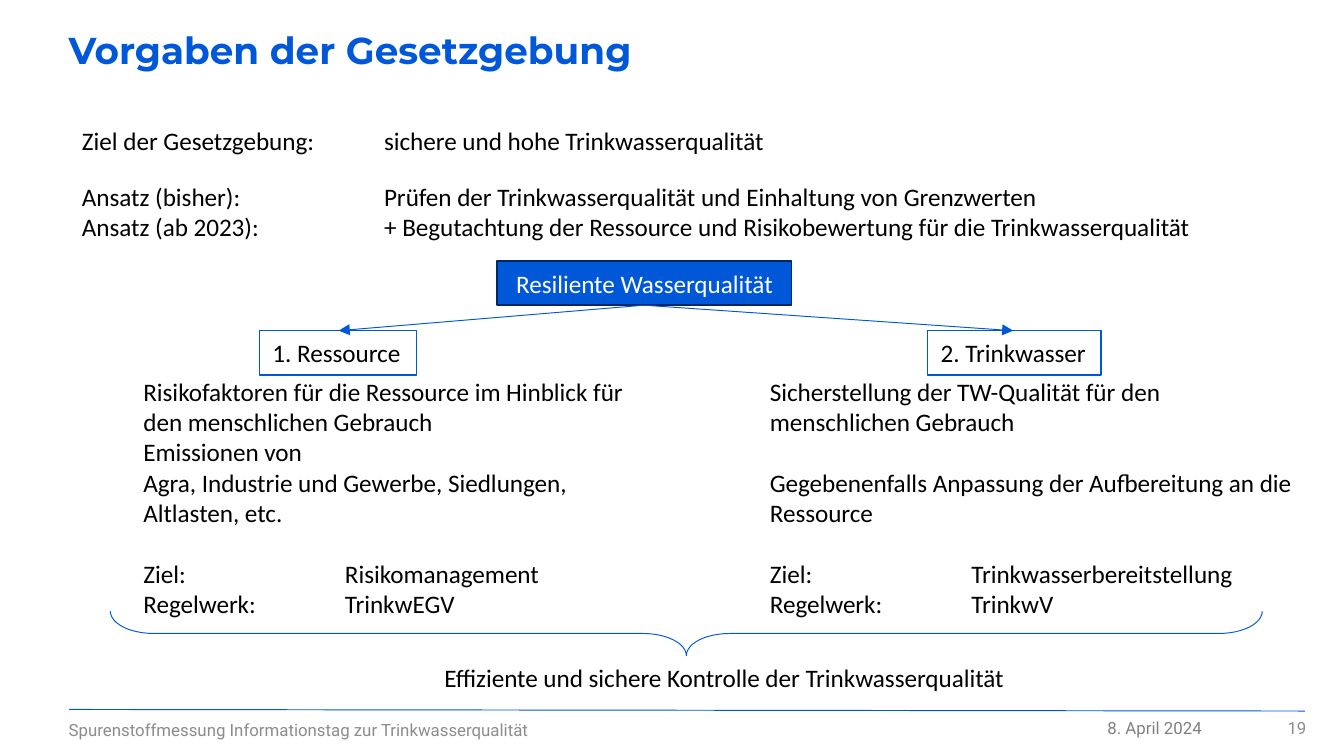
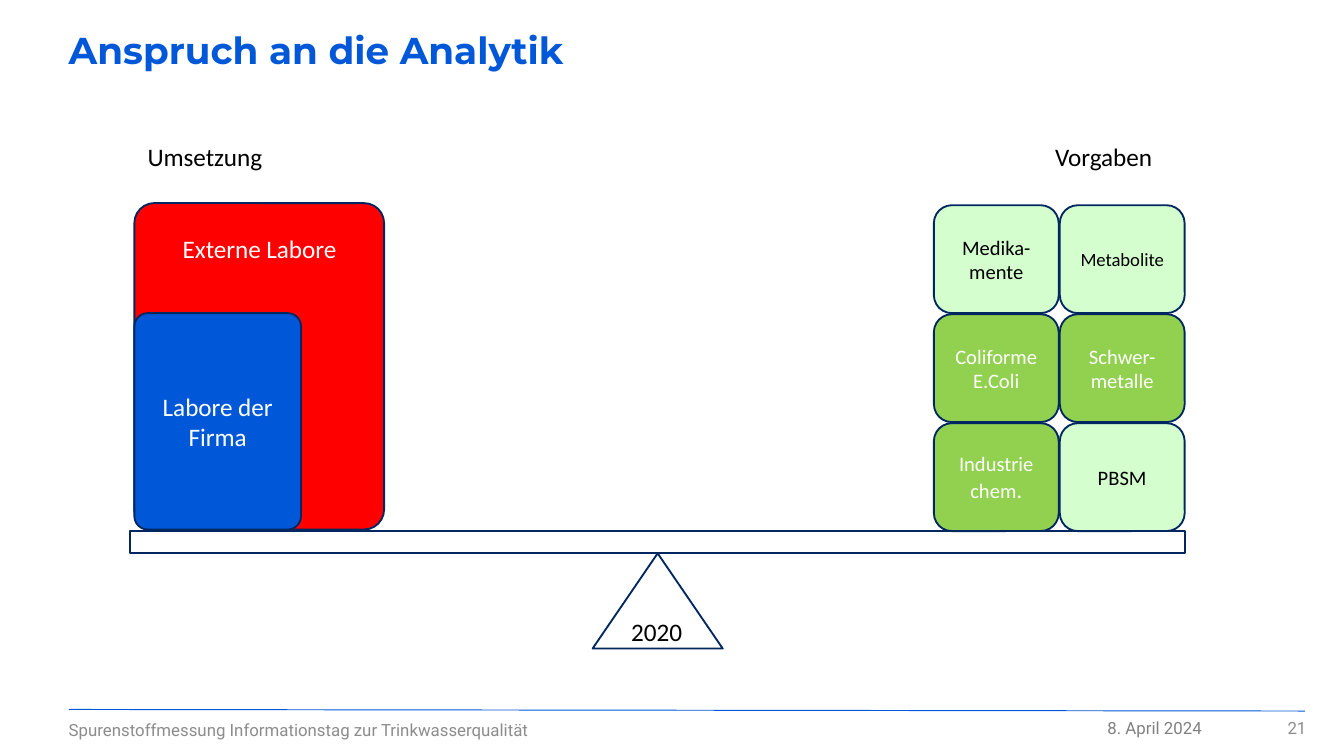
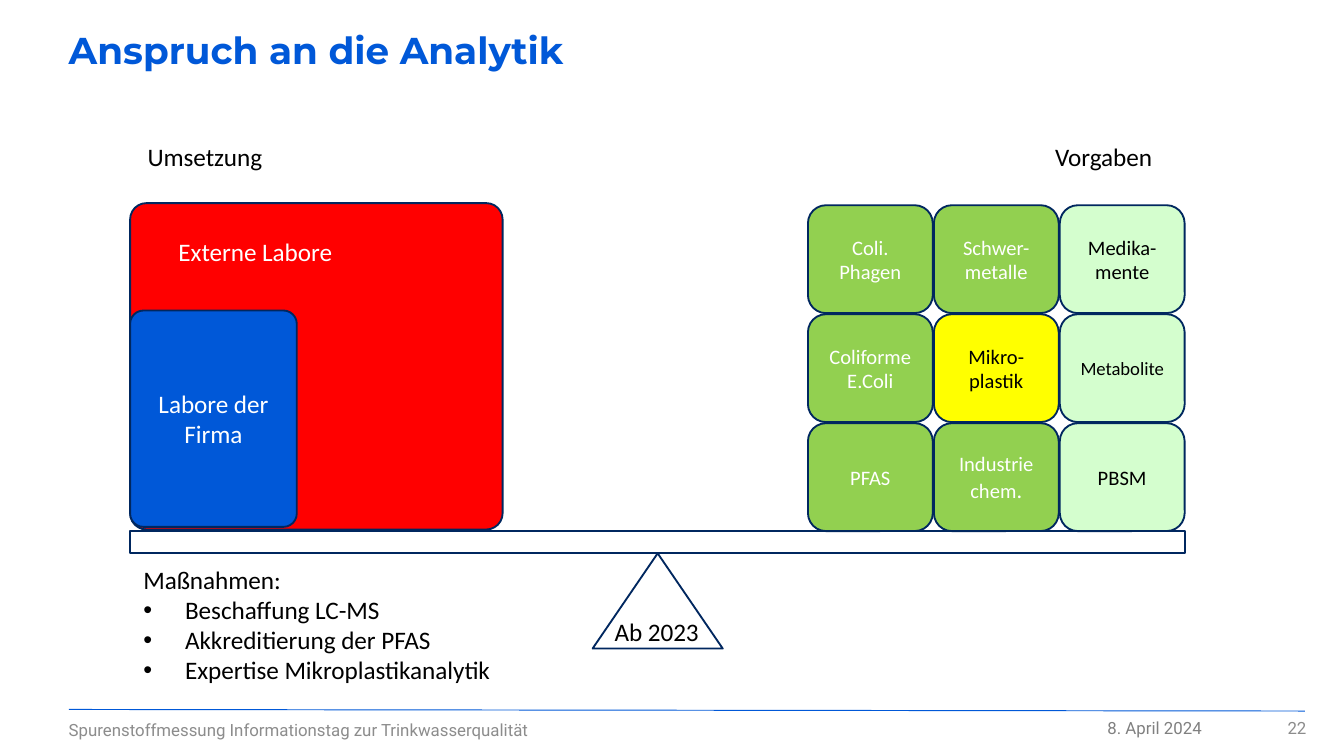
"""Build three slides on drinking water rules and laboratory analysis."""
from lxml import etree
from pptx import Presentation
from pptx import util as u
from pptx.dml import color
from pptx.enum import shapes, text
from pptx.oxml import ns

BLUE, NAVY, RED = "0058D8", "00275F", "FF0000"
GREEN, MINT, YELLOW = "92D050", "D4FECE", "FFFF00"
BLACK, WHITE, GREY, DATE_GREY = "000000", "FFFFFF", "8C8C8C", "808080"
BODY, HEAD, FOOT = "Calibri", "Montserrat", "Roboto"
BODY_SIZE, LINE_GAP = 13.5, 16.4
SHAPE, ALIGN, ANCHOR = shapes.MSO_SHAPE, text.PP_ALIGN, text.MSO_ANCHOR

INDUSTRY = [[("Industrie chem", 11), (".", 12)]]
COLI = ["Coliforme", "E.Coli"]
GRID_2020 = [
    [(["Medika-mente"], MINT, 11), (["Metabolite"], MINT, 10)],
    [(COLI, GREEN, 11), (["Schwer-metalle"], GREEN, 11)],
    [(INDUSTRY, GREEN, 11), (["PBSM"], MINT, 11)],
]
GRID_2023 = [
    [(["Coli. Phagen"], GREEN, 11), (["Schwer-metalle"], GREEN, 11), (["Medika-mente"], MINT, 11)],
    [(COLI, GREEN, 11), (["Mikro-plastik"], YELLOW, 11), (["Metabolite"], MINT, 10)],
    [(["PFAS"], GREEN, 11), (INDUSTRY, GREEN, 11), (["PBSM"], MINT, 11)],
]


def rgb(value):
    """Turn a hex string into a colour."""
    return color.RGBColor.from_string(value)


def cm(*values):
    """Turn numbers into lengths in centimetres."""
    return [u.Cm(v) for v in values]


def add_xml(parent, tag, **attrs):
    """Append a drawing element with the given attributes."""
    return etree.SubElement(parent, ns.qn(tag), attrs)


def write(sp, paras, size=BODY_SIZE, ink=BLACK, font=BODY, align=ALIGN.LEFT,
          anchor=ANCHOR.TOP, wrap=True, tab=None, gaps=None, bold=False):
    """Fill a shape with paragraphs, each a string or a list of sized runs."""
    tf = sp.text_frame
    tf.word_wrap, tf.vertical_anchor = wrap, anchor
    for i, para in enumerate(paras):
        p = tf.paragraphs[0] if i == 0 else tf.add_paragraph()
        p.alignment = align
        if tab:
            tabs = add_xml(p._p.get_or_add_pPr(), "a:tabLst")
            add_xml(tabs, "a:tab", pos=str(u.Cm(tab)), algn="l")
        if gaps and i in gaps:
            p.space_before = u.Pt(gaps[i])
        for words, points in [(para, size)] if isinstance(para, str) else para:
            r = p.add_run()
            r.text = words
            r.font.name, r.font.size, r.font.bold = font, u.Pt(points), bold
            r.font.color.rgb = rgb(ink)
    return tf


def add_text(s, box, paras, margins=True, **style):
    """Add a text box, with or without inner margins."""
    sp = s.shapes.add_textbox(*cm(*box))
    tf = write(sp, paras, **style)
    if not margins:
        tf.margin_left = tf.margin_right = tf.margin_top = tf.margin_bottom = 0
    return tf


def add_box(s, kind, box, fill=None, line=NAVY, width=1, adjust=()):
    """Add a preset shape with an outline and an optional fill."""
    sp = s.shapes.add_shape(kind, *cm(*box))
    sp.shadow.inherit = False
    if fill:
        sp.fill.solid()
        sp.fill.fore_color.rgb = rgb(fill)
    else:
        sp.fill.background()
    sp.line.color.rgb, sp.line.width = rgb(line), u.Pt(width)
    for i, value in enumerate(adjust):
        sp.adjustments[i] = value
    return sp


def add_line(s, start, end, arrow=False):
    """Add a thin blue line, with an arrowhead at its end if wanted."""
    sp = s.shapes.add_connector(shapes.MSO_CONNECTOR.STRAIGHT, *cm(*start, *end))
    sp.line.color.rgb, sp.line.width = rgb(BLUE), u.Pt(0.5)
    if arrow:
        add_xml(sp.line._get_or_add_ln(), "a:tailEnd", type="triangle")
    add_xml(sp._element.spPr, "a:effectLst")


def add_bullets(paragraphs):
    """Give paragraphs a hanging bullet."""
    for p in paragraphs:
        pPr = p._p.get_or_add_pPr()
        pPr.set("marL", str(u.Cm(0.79)))
        pPr.set("indent", str(u.Cm(-0.79)))
        add_xml(pPr, "a:buFont", typeface="Arial")
        add_xml(pPr, "a:buChar", char="•")


def add_page(prs, title, number):
    """Add a slide with its title, footer line and footer texts."""
    s = prs.slides.add_slide(prs.slide_layouts[6])
    add_line(s, (1.3, 13.41), (24.66, 13.44))
    tf = add_text(s, (1.3, 0.61, 16.69, 2.18), [title], margins=False,
                  size=20, ink=BLUE, font=HEAD, bold=True)
    tf.paragraphs[0].line_spacing = 0.9
    for box, words, ink, align in (
            ((17, 13.41, 5.71, 0.71), "8. April 2024", DATE_GREY, ALIGN.RIGHT),
            ((1.3, 13.44, 8.94, 0.71), "Spurenstoffmessung Informationstag zur Trinkwasserqualität",
             GREY, ALIGN.LEFT),
            ((23.06, 13.41, 1.63, 0.71), str(number), GREY, ALIGN.RIGHT)):
        add_text(s, box, [words], margins=False, size=9, ink=ink, font=FOOT,
                 align=align, anchor=ANCHOR.MIDDLE)
    return s


def add_branch(s, box, label, tip):
    """Add an outlined branch label and the arrow that leads to it."""
    write(add_box(s, SHAPE.RECTANGLE, box, line=BLUE, width=0.75), [label], wrap=False)
    add_line(s, (12.17, 5.77), (tip, 6.25), arrow=True)


def add_tiles(s, rows):
    """Stack rounded tiles on the right end of the beam."""
    for i, row in enumerate(rows):
        for j, (paras, fill, size) in enumerate(row):
            left = 20.03 - 2.38 * (len(row) - 1 - j)
            sp = add_box(s, SHAPE.ROUNDED_RECTANGLE, (left, 3.88 + 2.06 * i, 2.36, 2.04), fill)
            write(sp, paras, size=size, ink=WHITE if fill == GREEN else BLACK,
                  align=ALIGN.CENTER, anchor=ANCHOR.MIDDLE)


def add_labs(s, left, width, corner, label_top, own_top):
    """Add the external laboratories with the own laboratories in front."""
    add_box(s, SHAPE.ROUNDED_RECTANGLE, (left, 3.84, width, 6.17), RED, adjust=[corner])
    own = add_box(s, SHAPE.ROUNDED_RECTANGLE, (left, own_top, 3.15, 4.09), BLUE, adjust=[0.08])
    write(own, ["Labore der", "Firma"], ink=WHITE, align=ALIGN.CENTER, anchor=ANCHOR.MIDDLE)
    add_text(s, (left + 0.36, label_top, 4.01, 0.86), ["Externe Labore"],
             ink=WHITE, align=ALIGN.CENTER)


def add_scale(s, year, year_width):
    """Add the beam, its support, the side headings and the year."""
    add_box(s, SHAPE.RECTANGLE, (2.46, 10.03, 19.94, 0.43))
    add_box(s, SHAPE.ISOSCELES_TRIANGLE, (11.2, 10.46, 2.46, 1.8))
    add_text(s, (2.54, 2.54, 2.72, 0.84), ["Umsetzung"], wrap=False)
    add_text(s, (19.69, 2.54, 2.39, 0.84), ["Vorgaben"], wrap=False)
    add_text(s, (12.43 - year_width / 2, 11.53, year_width, 0.84), [year], wrap=False)


def build_rules(prs):
    """Build the slide on the legal requirements."""
    s = add_page(prs, "Vorgaben der Gesetzgebung", 19)
    add_text(s, (1.3, 2.24, 13.59, 0.84),
             ["Ziel der Gesetzgebung:\tsichere und hohe Trinkwasserqualität"], tab=5.71)
    add_text(s, (1.3, 3.3, 21.74, 1.42),
             ["Ansatz (bisher):\tPrüfen der Trinkwasserqualität und Einhaltung von Grenzwerten",
              "Ansatz (ab 2023):\t+ Begutachtung der Ressource und Risikobewertung "
              "für die Trinkwasserqualität"], tab=5.71)
    goal = add_box(s, SHAPE.RECTANGLE, (9.4, 4.93, 5.56, 0.84), BLUE)
    write(goal, ["Resiliente Wasserqualität"], ink=WHITE, align=ALIGN.CENTER,
          anchor=ANCHOR.MIDDLE)
    add_branch(s, (4.9, 6.25, 2.97, 0.84), "1. Ressource", 6.4)
    add_branch(s, (17.53, 6.25, 3.28, 0.84), "2. Trinkwasser", 19.15)
    add_text(s, (2.46, 6.99, 9.83, 4.88),
             ["Risikofaktoren für die Ressource im Hinblick für den menschlichen Gebrauch",
              "Emissionen von", "Agra, Industrie und Gewerbe, Siedlungen,", "Altlasten, etc.",
              "Ziel:\tRisikomanagement", "Regelwerk:\tTrinkwEGV"],
             tab=3.81, gaps={4: LINE_GAP})
    add_text(s, (14.3, 6.99, 10.36, 5.46),
             ["Sicherstellung der TW-Qualität für den menschlichen Gebrauch",
              "Gegebenenfalls Anpassung der Aufbereitung an die Ressource",
              "Ziel:\tTrinkwasserbereitstellung", "Regelwerk:\tTrinkwV"],
             tab=3.81, gaps={1: LINE_GAP, 2: LINE_GAP})
    add_text(s, (8.15, 12.4, 11.28, 0.84),
             ["Effiziente und sichere Kontrolle der Trinkwasserqualität"], wrap=False)
    brace = add_box(s, SHAPE.RIGHT_BRACE, (12.55, 1.09, 0.84, 21.77), line=BLUE, width=0.5,
                    adjust=[0.98, 0.5])
    brace.rotation = 90


def build_scale(prs, number, labs, tiles, year, year_width):
    """Build a slide that weighs laboratories against requirements."""
    s = add_page(prs, "Anspruch an die Analytik", number)
    add_labs(s, *labs)
    add_tiles(s, tiles)
    add_scale(s, year, year_width)
    return s


def main():
    """Build and save the presentation."""
    prs = Presentation()
    prs.slide_width, prs.slide_height = cm(25.4, 14.29)
    build_rules(prs)
    build_scale(prs, 21, (2.54, 4.72, 0.08, 4.29, 5.92), GRID_2020, "2020", 1.5)
    s = build_scale(prs, 22, (2.46, 7.04, 0.05, 4.34, 5.87), GRID_2023, "Ab 2023", 2.13)
    tf = add_text(s, (2.46, 10.54, 7.14, 2.57),
                  ["Maßnahmen:", "Beschaffung LC-MS", "Akkreditierung der PFAS",
                   "Expertise Mikroplastikanalytik"])
    add_bullets(tf.paragraphs[1:])
    prs.save("out.pptx")


if __name__ == "__main__":
    main()
